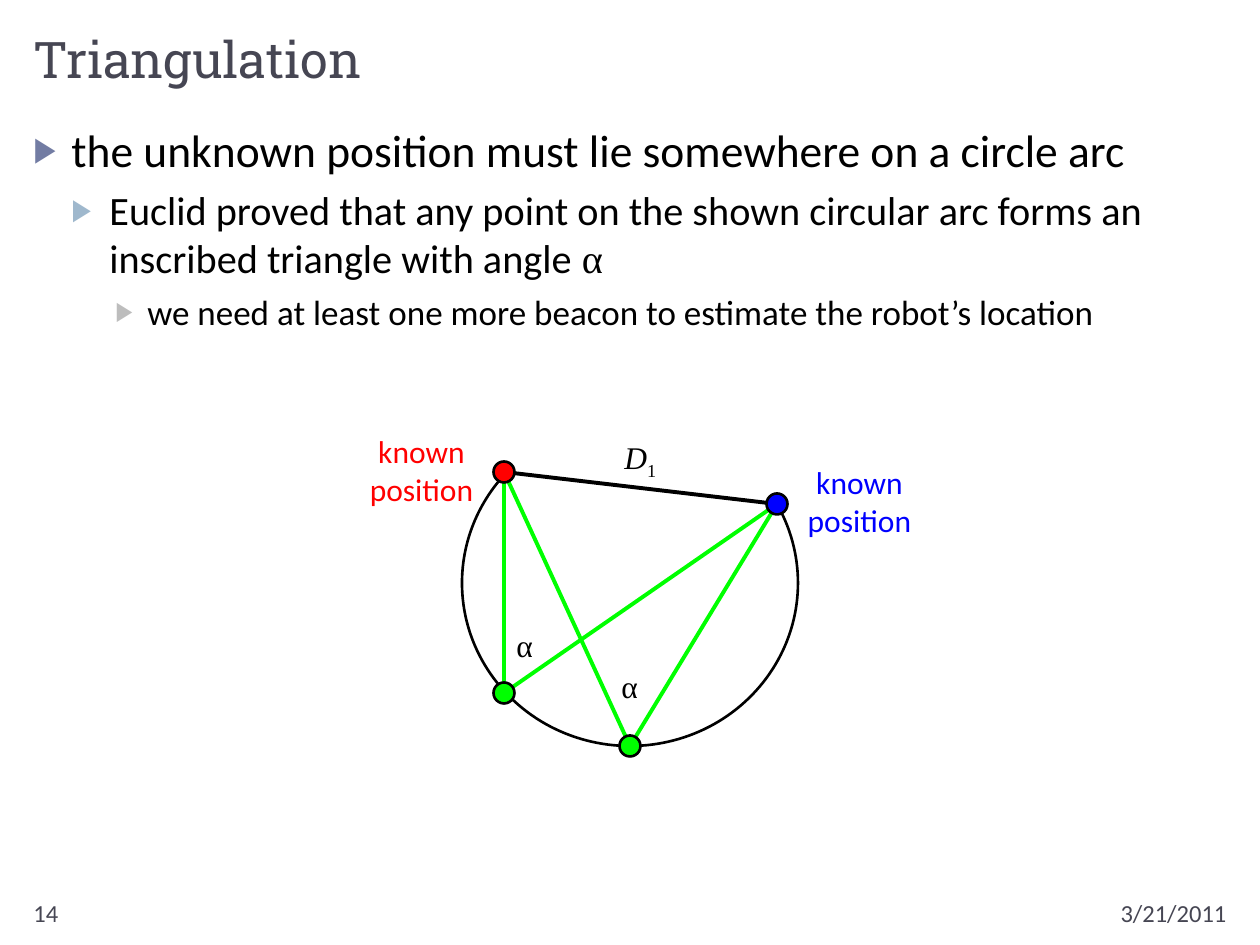
from lxml import etree
from pptx import Presentation, util as u
from pptx.dml.color import RGBColor
from pptx.enum import shapes as sh, text as tx
from pptx.oxml import ns

PX = 914400 / 126
BLACK = RGBColor(0x00, 0x00, 0x00)
SLATE = RGBColor(0x46, 0x46, 0x53)
RED = RGBColor(0xFF, 0x00, 0x00)
GREEN = RGBColor(0x00, 0xFF, 0x00)
BLUE = RGBColor(0x00, 0x00, 0xFF)
INDIGO = RGBColor(0x72, 0x7C, 0xA3)
SKY = RGBColor(0x9F, 0xB8, 0xCD)
GRAY = RGBColor(0xBD, 0xBD, 0xBD)
SANS, SLAB, SERIF = "Calibri", "Roboto Slab", "Times New Roman"


def px(*nums):
    return [u.Emu(round(n * PX)) for n in nums]


def style(obj, fmt):
    for key, val in fmt.items():
        setattr(obj, key, val)


def add_run(para, words, size, color=BLACK, name=SANS, **more):
    run = para.add_run()
    run.text = words
    style(run.font, dict(size=u.Pt(size), name=name, **more))
    run.font.color.rgb = color
    return run


def add_text(slide, box, **fmt):
    frame = slide.shapes.add_textbox(*px(*box)).text_frame
    style(frame, {"word_wrap": True, **fmt})
    return frame


def add_bullet(para, color, left, hang):
    props = para._p.get_or_add_pPr()
    props.set("marL", str(px(left)[0]))
    props.set("indent", str(px(-hang)[0]))
    for tag, key, val in (("buClr", None, None), ("buSzPct", "val", "76000"),
                          ("buFont", "typeface", "Arial"), ("buChar", "char", "▶")):
        node = etree.SubElement(props, ns.qn("a:" + tag))
        if key:
            node.set(key, val)
        else:
            etree.SubElement(node, ns.qn("a:srgbClr")).set("val", str(color))


def add_title(slide, box):
    frame = add_text(slide, box, vertical_anchor=tx.MSO_ANCHOR.BOTTOM)
    add_run(frame.paragraphs[0], "Triangulation", 28.8, SLATE, SLAB)


def add_body(slide, box):
    frame = add_text(slide, box)
    rows = [
        (26, 6, INDIGO, 38, [("the unknown position must lie somewhere on a circle arc", SANS)]),
        (23, 5, SKY, 38, [("Euclid proved that any point on the shown circular arc forms "
                           "an inscribed triangle with angle ", SANS), ("α", SERIF)]),
        (20, 5, GRAY, 32, [("we need at least one more beacon to estimate "
                            "the robot’s location", SANS)]),
    ]
    for level, (size, gap, color, hang, runs) in enumerate(rows):
        para = frame.add_paragraph() if level else frame.paragraphs[0]
        style(para, dict(level=level, space_before=u.Pt(gap)))
        add_bullet(para, color, 38 * (level + 1), hang)
        for words, name in runs:
            add_run(para, words, size, name=name)


def add_footer(slide, box):
    x, y, w, h = box
    for words, left, wide, align in (("14", x, 273, tx.PP_ALIGN.LEFT),
                                     ("3/21/2011", x + w - 231, 231, tx.PP_ALIGN.RIGHT)):
        para = add_text(slide, (left, y, wide, h)).paragraphs[0]
        para.alignment = align
        add_run(para, words, 14, SLATE)


def add_arc(slide, box, start, end):
    arc = slide.shapes.add_shape(sh.MSO_SHAPE.ARC, *px(*box))
    arc.shadow.inherit = False
    arc.fill.background()
    style(arc.line, dict(width=u.Pt(1.5)))
    arc.line.color.rgb = BLACK
    for i, angle in enumerate((start, end)):
        arc.adjustments[i] = angle * 0.6


def add_line(slide, tail, head, color):
    line = slide.shapes.add_connector(sh.MSO_CONNECTOR.STRAIGHT, *px(*tail, *head))
    line.line.width = u.Pt(2.25)
    line.line.color.rgb = color
    etree.SubElement(line._element.spPr, ns.qn("a:effectLst"))


def add_dot(slide, spot, color):
    size = 21
    x, y = spot
    dot = slide.shapes.add_shape(
        sh.MSO_SHAPE.OVAL, *px(x - size / 2, y - size / 2, size, size))
    dot.shadow.inherit = False
    dot.fill.solid()
    dot.fill.fore_color.rgb = color
    dot.line.width = u.Pt(1.5)
    dot.line.color.rgb = BLACK


def add_label(slide, box):
    return add_text(slide, box, word_wrap=False,
                    auto_size=tx.MSO_AUTO_SIZE.SHAPE_TO_FIT_TEXT)


def add_figure(slide, box):
    x, y, w, h = box

    def at(left, top, *size):
        return (x + left, y + top, *size)

    red, blue = at(147, 52), at(420, 84)
    left, low = at(147, 273), at(273, 326)
    add_arc(slide, at(105, 0, 336, 326), 331, 221)
    add_line(slide, red, blue, BLACK)
    for spot in (low, left):
        for mark in (red, blue):
            add_line(slide, spot, mark, GREEN)
    for spot, color in ((low, GREEN), (left, GREEN), (blue, BLUE), (red, RED)):
        add_dot(slide, spot, color)

    for spot, color in ((at(0, 6), RED), (at(w - 129, 37), BLUE)):
        frame = add_label(slide, (*spot, 129, 89))
        for i, word in enumerate(("known", "position")):
            para = frame.add_paragraph() if i else frame.paragraphs[0]
            para.alignment = tx.PP_ALIGN.CENTER
            add_run(para, word, 18, color)
    for spot in (at(252, 241), at(147, 200)):
        add_run(add_label(slide, (*spot, 42, 50)).paragraphs[0], "α", 18, name=SERIF)
    para = add_label(slide, at(255, 12, 59, 50)).paragraphs[0]
    add_run(para, "D", 18, name=SERIF, italic=True)
    sub = add_run(para, "1", 18, name=SERIF, italic=False)
    sub.font._element.set("baseline", "-25000")


def main():
    deck = Presentation()
    style(deck, dict(zip(("slide_width", "slide_height"), px(1260, 945))))
    slide = deck.slides.add_slide(deck.slide_layouts[6])
    add_title(slide, (21, 21, 1218, 74))
    add_body(slide, (21, 116, 1218, 756))
    add_figure(slide, (357, 420, 567, 326))
    add_footer(slide, (21, 892, 1218, 34))
    deck.save("out.pptx")


if __name__ == "__main__":
    main()
